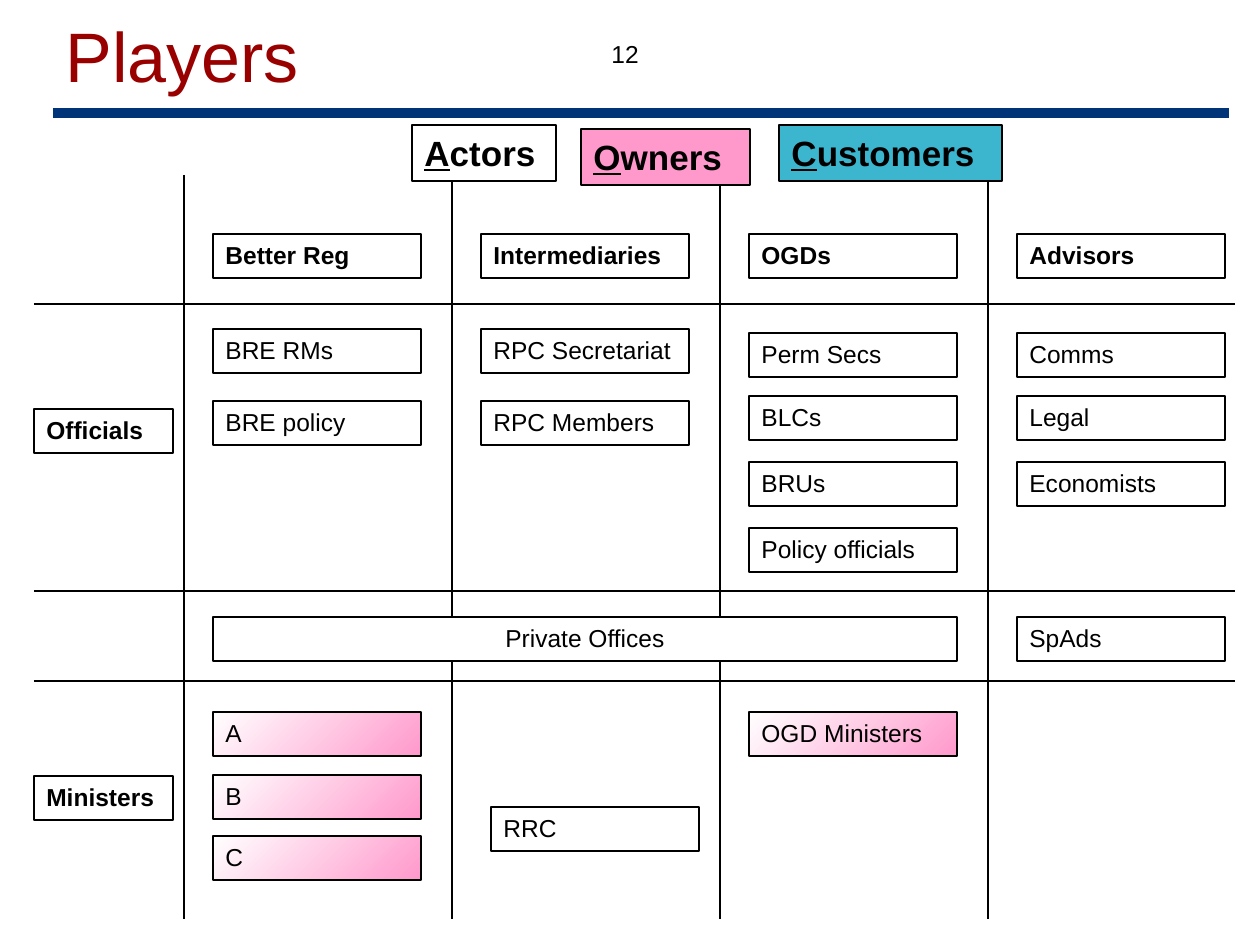
from pptx import Presentation
from pptx import util as u
from pptx.dml.color import RGBColor
from pptx.enum import shapes, text
from pptx.oxml.ns import qn

PX = 914400 / 126
FONT = "Arial"
BLACK, WHITE, PINK = "000000", "FFFFFF", "FF99CC"
TEAL, NAVY, DARK_RED = "3CB6CE", "003478", "990000"

# Grid of the players table
COLUMN_LEFT, COLUMN_STEP, COLUMN_COUNT = 213, 268, 4
BOX_WIDTH, BOX_HEIGHT = 208, 44
DIVIDER_LEFT = 184
ROW_DIVIDERS = (304, 591, 681)

HEADINGS = ("Better Reg", "Intermediaries", "OGDs", "Advisors")
# Column, then (top, label) pairs
OFFICIALS = (
    (0, ((329, "BRE RMs"), (401, "BRE policy"))),
    (1, ((329, "RPC Secretariat"), (401, "RPC Members"))),
    (2, ((333, "Perm Secs"), (396, "BLCs"), (462, "BRUs"),
         (528, "Policy officials"))),
    (3, ((333, "Comms"), (396, "Legal"), (462, "Economists"),
         (617, "SpAds"))),
)
MINISTERS = (
    (0, ((712, "A"), (775, "B"), (836, "C"))),
    (2, ((712, "OGD Ministers"),)),
)
ROLES = (
    ("Actors", 412, 125, 144, WHITE),
    ("Owners", 581, 129, 169, PINK),
    ("Customers", 779, 125, 223, TEAL),
)


def px(length):
    return u.Emu(round(length * PX))


def colour(value):
    return RGBColor.from_string(value)


def column_left(column):
    return COLUMN_LEFT + column * COLUMN_STEP


def style(paragraph, size, value=BLACK, bold=False):
    font = paragraph.font
    font.name, font.size, font.bold = FONT, u.Pt(size), bold
    font.color.rgb = colour(value)


def add_rule(slide, start, end, value=BLACK, weight=1.5):
    rule = slide.shapes.add_connector(
        shapes.MSO_CONNECTOR.STRAIGHT, *map(px, start + end))
    rule.line.color.rgb = colour(value)
    rule.line.width = u.Pt(weight)
    properties = rule._element.spPr
    properties.append(properties.makeelement(qn("a:effectLst"), {}))


def add_box(slide, left, top, width, height=BOX_HEIGHT, fill=None, weight=1):
    """Add an outlined box and return it with its first paragraph."""
    box = slide.shapes.add_shape(
        shapes.MSO_SHAPE.RECTANGLE, *map(px, (left, top, width, height)))
    box.shadow.inherit = False
    box.line.color.rgb = colour(BLACK)
    box.line.width = u.Pt(weight)
    if fill:
        box.fill.solid()
        box.fill.fore_color.rgb = colour(fill)
    else:
        box.fill.background()
    frame = box.text_frame
    frame.auto_size = text.MSO_AUTO_SIZE.SHAPE_TO_FIT_TEXT
    frame.vertical_anchor = text.MSO_ANCHOR.TOP
    paragraph = frame.paragraphs[0]
    paragraph.alignment = text.PP_ALIGN.LEFT
    return box, paragraph


def add_player(slide, label, left, top, width=BOX_WIDTH, bold=False, fill=None):
    box, paragraph = add_box(slide, left, top, width, fill=fill)
    paragraph.text = label
    style(paragraph, 14, bold=bold)
    return box, paragraph


def add_minister(slide, label, left, top):
    box, _ = add_player(slide, label, left, top)
    box.fill.gradient()
    box.fill.gradient_angle = 315
    for stop, value, position in zip(
            box.fill.gradient_stops, (WHITE, PINK), (0, 1)):
        stop.color.rgb = colour(value)
        stop.position = position


def add_role(slide, label, left, top, width, fill):
    _, paragraph = add_box(slide, left, top, width, 56, fill, weight=0.75)
    style(paragraph, 20, bold=True)
    for part, underlined in ((label[0], True), (label[1:], False)):
        run = paragraph.add_run()
        run.text = part
        font = run.font
        font.underline = underlined


def add_header(slide):
    add_rule(slide, (53, 113), (1229, 113), NAVY, 6)

    title = slide.shapes.title
    title.left, title.top, title.width, title.height = map(
        px, (53, -24, 1155, 158))
    title.text_frame.text = "Players"
    title.text_frame.vertical_anchor = text.MSO_ANCHOR.MIDDLE
    heading = title.text_frame.paragraphs[0]
    heading.alignment = text.PP_ALIGN.LEFT
    style(heading, 40, DARK_RED)

    page = slide.shapes.add_textbox(*map(px, (599, 22, 94, 63))).text_frame
    page.word_wrap = True
    page.vertical_anchor = text.MSO_ANCHOR.MIDDLE
    page.text = "12"
    style(page.paragraphs[0], 14)


def add_grid(slide):
    for y in ROW_DIVIDERS:
        add_rule(slide, (34, y), (1235, y))
    for column in range(COLUMN_COUNT):
        x = DIVIDER_LEFT + column * COLUMN_STEP
        add_rule(slide, (x, 175), (x, 919))


def main():
    deck = Presentation()
    deck.slide_width, deck.slide_height = px(1260), px(945)
    slide = deck.slides.add_slide(deck.slide_layouts[5])

    add_header(slide)
    add_grid(slide)

    # Column and row headings
    for column, label in enumerate(HEADINGS):
        add_player(slide, label, column_left(column), 234, bold=True)
    for label, top in (("Officials", 409), ("Ministers", 776)):
        add_player(slide, label, 34, top, width=139, bold=True)

    # Players in each column
    for column, players in OFFICIALS:
        for top, label in players:
            add_player(slide, label, column_left(column), top)
    for column, players in MINISTERS:
        for top, label in players:
            add_minister(slide, label, column_left(column), top)
    add_player(slide, "RRC", 491, 807)

    # Box spanning the first three columns
    _, offices = add_player(slide, "Private Offices", COLUMN_LEFT, 617,
                            width=2 * COLUMN_STEP + BOX_WIDTH, fill=WHITE)
    offices.alignment = text.PP_ALIGN.CENTER

    # Role legend
    for role in ROLES:
        add_role(slide, *role)

    deck.save("out.pptx")


if __name__ == "__main__":
    main()
